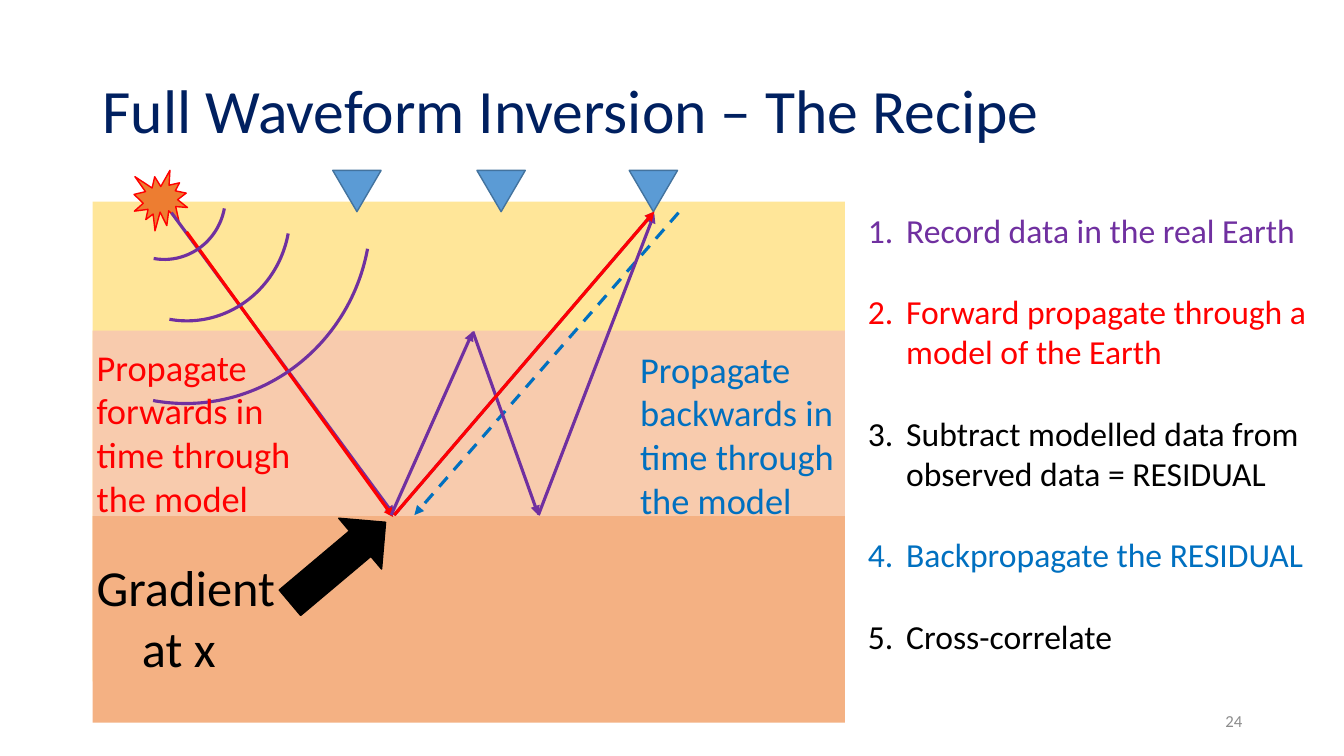
from lxml import etree
from pptx import Presentation
from pptx.dml.color import RGBColor
from pptx.enum import dml, shapes, text
from pptx.oxml.ns import qn
from pptx.util import Inches, Pt

THEME = {
    "font": "Calibri",
    "colors": {
        "navy": "002060", "purple": "7030A0", "red": "FF0000", "blue": "0070C0",
        "black": "000000", "grey": "8C8C8C", "sand": "FFE699", "clay": "F8CBAD",
        "rock": "F4B183", "orange": "ED7D31", "receiver": "5B9BD5", "receiver edge": "43739E",
    },
    "sizes": {"title": 44, "gradient": 36, "label": 26, "step": 24, "number": 12},
    "ray": 2.25,
    "edge": 1,
}

TITLE = "Full Waveform Inversion – The Recipe"
PAGE = "24"
FORWARD = "Propagate forwards in time through the model"
BACKWARD = "Propagate backwards in time through the model"
GRADIENT = [("Gradient", "black"), ("at x", "black")]
STEPS = [
    ("Record data in the real Earth", "purple"),
    ("Forward propagate through a model of the Earth", "red"),
    ("Subtract modelled data from observed data = RESIDUAL", "black"),
    ("Backpropagate the RESIDUAL", "blue"),
    ("Cross-correlate", "black"),
]

EARTH_LEFT, EARTH_WIDTH = 0.92, 7.46
LAYERS = [(2, 4.76, "sand"), (3.28, 3.27, "clay"), (5.12, 2.05, "rock")]  # top, height, colour
RECEIVERS = [3.3, 4.73, 6.24]  # left edges
WAVEFRONTS = [(1.02, 1.36, 1.23, 1.2), (0.82, 1.13, 2.1, 2.01), (-0.01, 0.32, 3.73, 3.64)]

RECEIVER_TIP = (6.49, 2.1)
REFLECTOR = (3.91, 5.11)
MULTIPLE = [(3.88, 5.11), (4.69, 3.29), (5.34, 5.11), (6.49, 2.12)]
PRIMARY_RAYS = [
    ((1.7, 2.11), REFLECTOR, "purple", False),
    (REFLECTOR, RECEIVER_TIP, "purple", False),
    ((6.73, 2.11), (4.11, 5.11), "blue", True),
    ((1.85, 2.3), (3.9, 5.13), "red", False),
]
MULTIPLE_RAYS = [(start, end, "purple", False) for start, end in zip(MULTIPLE, MULTIPLE[1:])]
MODELLED_RAY = (REFLECTOR, RECEIVER_TIP, "red", False)

presentation = Presentation()
presentation.slide_width, presentation.slide_height = Inches(13.33), Inches(7.5)
slide = presentation.slides.add_slide(presentation.slide_layouts[6])


def color(name):
    return RGBColor.from_string(THEME["colors"][name])


def add_text(lines, box, size, fill="black", align=text.PP_ALIGN.LEFT,
             anchor=text.MSO_ANCHOR.TOP, line_spacing=None, gap=0, numbered=False,
             indents=()):
    """Add a text box; lines is a string or a list of (wording, colour) pairs."""
    if isinstance(lines, str):
        lines = [(lines, fill)]
    frame = slide.shapes.add_textbox(*map(Inches, box)).text_frame
    frame.word_wrap = True
    frame.vertical_anchor = anchor
    for i, (wording, tint) in enumerate(lines):
        paragraph = frame.paragraphs[0] if i == 0 else frame.add_paragraph()
        paragraph.alignment = align
        if line_spacing:
            paragraph.line_spacing = line_spacing
        if gap and i:
            paragraph.space_before = Pt(gap)
        properties = paragraph._p.get_or_add_pPr()
        if indents:
            properties.set("marL", str(Inches(indents[i])))
        if numbered:
            properties.set("marL", str(Inches(0.38)))
            properties.set("indent", str(Inches(-0.38)))
            etree.SubElement(properties, qn("a:buFont"), typeface="+mj-lt")
            etree.SubElement(properties, qn("a:buAutoNum"), type="arabicPeriod")
        run = paragraph.add_run()
        run.text = wording
        run.font.name = THEME["font"]
        run.font.size = Pt(THEME["sizes"][size])
        run.font.color.rgb = color(tint)


def add_figure(kind, box, fill=None, line=None, width=THEME["edge"], rotation=0):
    figure = slide.shapes.add_shape(kind, *map(Inches, box))
    figure.shadow.inherit = False
    figure.rotation = rotation
    if fill:
        figure.fill.solid()
        figure.fill.fore_color.rgb = color(fill)
    else:
        figure.fill.background()
    if line:
        figure.line.color.rgb = color(line)
        figure.line.width = Pt(width)
    else:
        figure.line.fill.background()


def add_ray(start, end, tint, dashed):
    ray = slide.shapes.add_connector(shapes.MSO_CONNECTOR.STRAIGHT, *map(Inches, start + end))
    ray.line.color.rgb = color(tint)
    ray.line.width = Pt(THEME["ray"])
    if dashed:
        ray.line.dash_style = dml.MSO_LINE.DASH
    etree.SubElement(ray.line._get_or_add_ln(), qn("a:tailEnd"), type="triangle")
    etree.SubElement(ray._element.spPr, qn("a:effectLst"))


KIND = shapes.MSO_SHAPE
add_text(TITLE, (0.92, 0.4, 11.5, 1.45), "title", "navy",
         anchor=text.MSO_ANCHOR.MIDDLE, line_spacing=0.9)

for top, height, tint in LAYERS:
    add_figure(KIND.RECTANGLE, (EARTH_LEFT, top, EARTH_WIDTH, height), tint)
add_figure(KIND.EXPLOSION1, (1.33, 1.69, 0.53, 0.6), "orange", "red")
for left in RECEIVERS:
    add_figure(KIND.ISOSCELES_TRIANGLE, (left, 1.69, 0.48, 0.41), "receiver",
               "receiver edge", rotation=180)

for ray in PRIMARY_RAYS:
    add_ray(*ray)

add_text(GRADIENT, (0.86, 5.47, 3.25, 1.31), "gradient", indents=(0, 0.45))
add_figure(KIND.DOWN_ARROW, (3.02, 4.96, 0.66, 1.24), "black", "black", rotation=229.9)
for wavefront in WAVEFRONTS:
    add_figure(KIND.ARC, wavefront, line="purple", width=THEME["ray"], rotation=100.4)

add_text(BACKWARD, (6.25, 3.39, 2.39, 1.85), "label", "blue")
add_text(FORWARD, (0.86, 3.37, 2.39, 1.85), "label", "red")
add_text(PAGE, (9.42, 6.95, 3, 0.4), "number", "grey",
         align=text.PP_ALIGN.RIGHT, anchor=text.MSO_ANCHOR.MIDDLE)

for ray in MULTIPLE_RAYS:
    add_ray(*ray)
add_text(STEPS, (8.51, 2.03, 4.68, 4.54), "step", gap=29.3, numbered=True)
add_ray(*MODELLED_RAY)

presentation.save("out.pptx")
